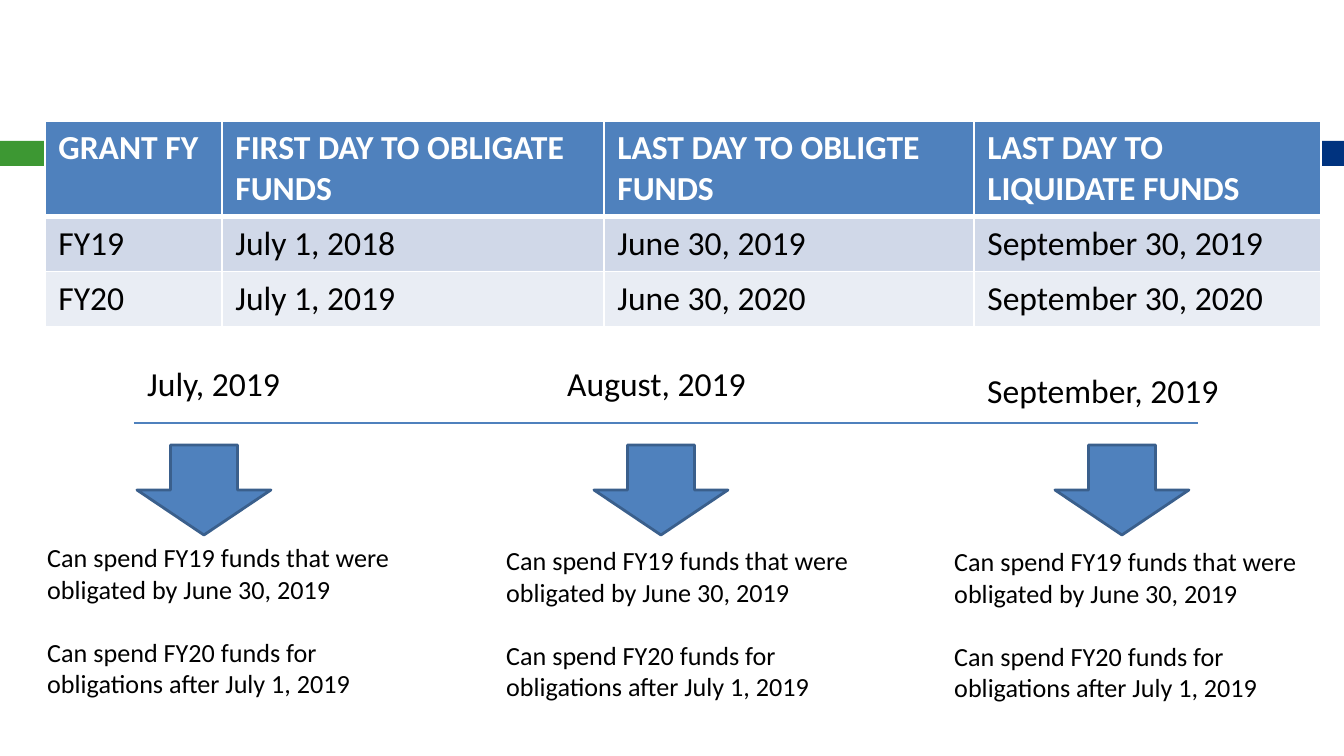
import dataclasses

import pptx
import pptx.dml.color
import pptx.enum.shapes
import pptx.enum.text
import pptx.oxml.ns
import pptx.util
from lxml import etree

PX = 914400 / 134.4


def px(length):
    return pptx.util.Emu(round(length * PX))


def rgb(value):
    return pptx.dml.color.RGBColor.from_string(value)


@dataclasses.dataclass(frozen=True)
class Theme:
    font: str = "Calibri"
    heading: int = 18
    body: int = 14
    paragraph_gap: int = 17
    white: str = "FFFFFF"
    black: str = "000000"
    blue: str = "4F81BD"
    outline: str = "3A5F8C"
    green: str = "3D9833"
    navy: str = "00337F"
    bands: tuple = ("D0D8E8", "E9EDF4")


def write_text(frame, text, font, size, color, bold=False, gap=0):
    frame.word_wrap = True
    for index, line in enumerate(text.split("\n")):
        paragraph = frame.paragraphs[0] if index == 0 else frame.add_paragraph()
        if index:
            paragraph.space_before = pptx.util.Pt(gap)
        run = paragraph.add_run()
        run.text = line
        run.font.name = font
        run.font.size = pptx.util.Pt(size)
        run.font.bold = bold
        run.font.color.rgb = rgb(color)


class SlideBuilder:
    def __init__(self, slide, theme):
        self.slide = slide
        self.theme = theme

    def shape(self, kind, left, top, width, height, fill, line=None):
        shape = self.slide.shapes.add_shape(kind, px(left), px(top), px(width), px(height))
        shape.shadow.inherit = False
        shape.fill.solid()
        shape.fill.fore_color.rgb = rgb(fill)
        if line:
            shape.line.color.rgb = rgb(line)
            shape.line.width = pptx.util.Pt(1.5)
        else:
            shape.line.fill.background()

    def text(self, text, left, top, width, height, size):
        box = self.slide.shapes.add_textbox(px(left), px(top), px(width), px(height))
        box.text_frame.auto_size = pptx.enum.text.MSO_AUTO_SIZE.SHAPE_TO_FIT_TEXT
        write_text(box.text_frame, text, font=self.theme.font, size=size,
                   color=self.theme.black, gap=self.theme.paragraph_gap)

    def line(self, left, right, y):
        line = self.slide.shapes.add_connector(
            pptx.enum.shapes.MSO_CONNECTOR.STRAIGHT, px(left), px(y), px(right), px(y))
        line.line.color.rgb = rgb(self.theme.blue)
        line.line.width = pptx.util.Pt(0.79)
        etree.SubElement(line._element.spPr, pptx.oxml.ns.qn("a:effectLst"))

    def borders(self, cell, **widths):
        properties = cell._tc.get_or_add_tcPr()
        for side, width in widths.items():
            border = etree.SubElement(properties, pptx.oxml.ns.qn(f"a:ln{side}"),
                                      w=str(pptx.util.Pt(width)))
            fill = etree.SubElement(border, pptx.oxml.ns.qn("a:solidFill"))
            etree.SubElement(fill, pptx.oxml.ns.qn("a:srgbClr"), val=self.theme.white)

    def table(self, rows, left, top, widths, heights):
        table = self.slide.shapes.add_table(
            len(rows), len(widths), px(left), px(top), px(sum(widths)), px(sum(heights))).table
        for column, width in zip(table.columns, widths):
            column.width = px(width)
        for index, (values, height) in enumerate(zip(rows, heights)):
            header = index == 0
            table.rows[index].height = px(height)
            fill = self.theme.blue if header else self.theme.bands[(index - 1) % 2]
            for cell, value in zip(table.rows[index].cells, values):
                self.borders(cell, L=1, R=1, T=3 if index == 1 else 1, B=3 if header else 1)
                cell.fill.solid()
                cell.fill.fore_color.rgb = rgb(fill)
                write_text(cell.text_frame, value, font=self.theme.font,
                           size=self.theme.heading, bold=header,
                           color=self.theme.white if header else self.theme.black)


GRANT_ROWS = [
    ("GRANT FY", "FIRST DAY TO OBLIGATE FUNDS", "LAST DAY TO OBLIGTE FUNDS",
     "LAST DAY TO LIQUIDATE FUNDS"),
    ("FY19", "July 1, 2018", "June 30, 2019", "September 30, 2019"),
    ("FY20", "July 1, 2019", "June 30, 2020", "September 30, 2020"),
]
SPENDING_RULES = (
    "Can spend FY19 funds that were obligated by June 30, 2019\n"
    "Can spend FY20 funds for obligations after July 1, 2019"
)
MONTHS = [
    ("July, 2019", (134, 356, 212), 137, (34, 535, 380)),
    ("August, 2019", (554, 356, 212), 594, (493, 538, 380)),
    ("September, 2019", (974, 363, 266), 1055, (941, 539, 370)),
]


def main():
    presentation = pptx.Presentation()
    presentation.slide_width = px(1344)
    presentation.slide_height = px(756)
    theme = Theme()
    builder = SlideBuilder(
        presentation.slides.add_slide(presentation.slide_layouts[6]), theme)
    shapes = pptx.enum.shapes.MSO_SHAPE

    builder.shape(shapes.RECTANGLE, 0, 141, 78, 25, theme.green)
    builder.shape(shapes.RECTANGLE, 87, 141, 1257, 25, theme.navy)
    builder.table(GRANT_ROWS, 45, 121, (177, 382, 370, 347), (94, 55, 55))
    builder.line(134, 1198, 423)

    for month, (left, top, width), arrow_left, (rules_left, rules_top, rules_width) in MONTHS:
        builder.text(month, left, top, width, 54, theme.heading)
        builder.shape(shapes.DOWN_ARROW, arrow_left, 445, 134, 90, theme.blue, theme.outline)
        builder.text(SPENDING_RULES, rules_left, rules_top, rules_width, 172, theme.body)

    presentation.save("out.pptx")


if __name__ == "__main__":
    main()
